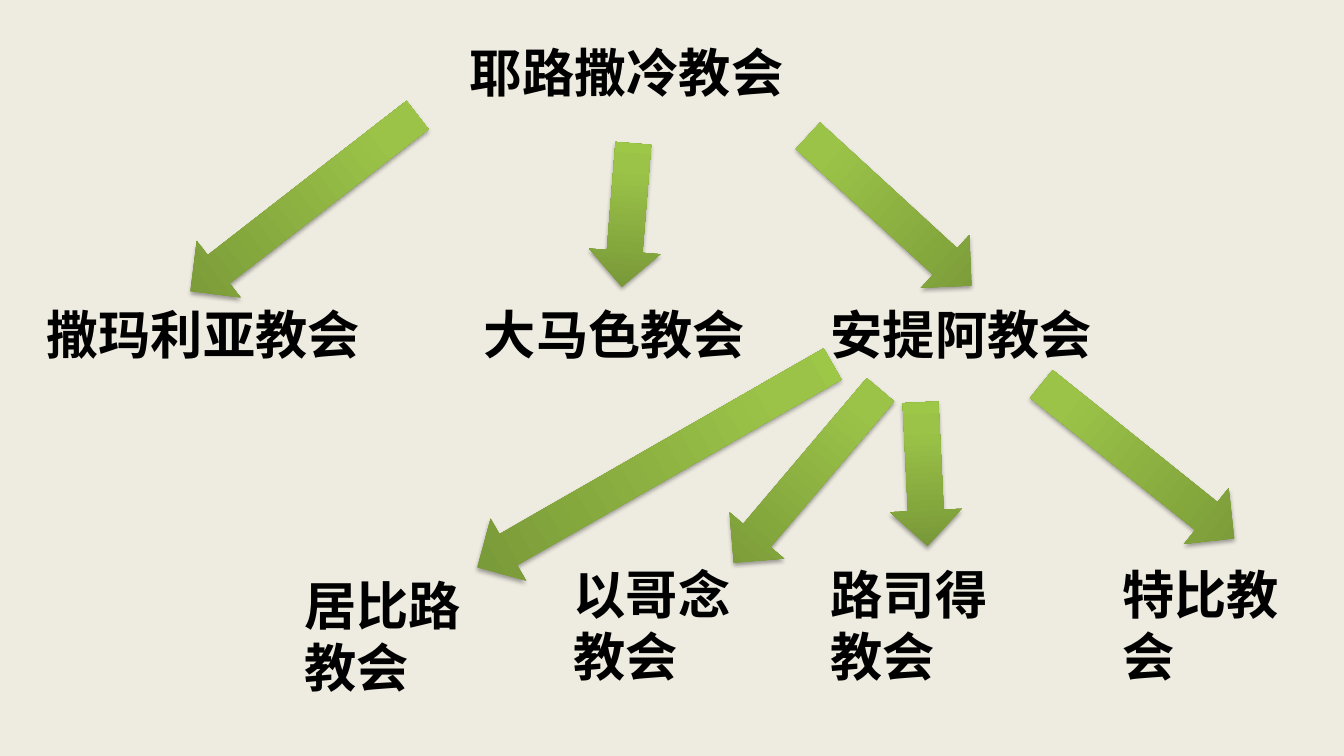
from pptx import Presentation
from pptx.dml.color import RGBColor
from pptx.enum.shapes import MSO_SHAPE
from pptx.enum.text import MSO_ANCHOR, PP_ALIGN
from pptx.oxml import parse_xml
from pptx.oxml.ns import nsdecls
from pptx.util import Inches, Pt

COLORS = {
    "background": "EEECE1",
    "text": "000000",
    "arrow_tip": "779737",
    "arrow_middle": "9BC348",
    "arrow_tail": "9DC746",
}
ARROW_WIDTH = 0.71


def write_church(frame, name, side_inset, font="Calibri"):
    frame.word_wrap = True
    frame.vertical_anchor = MSO_ANCHOR.MIDDLE
    frame.margin_left = frame.margin_right = Inches(side_inset)
    frame.margin_top = frame.margin_bottom = Inches(0.07)
    paragraph = frame.paragraphs[0]
    paragraph.text = name
    paragraph.alignment = PP_ALIGN.LEFT
    paragraph.line_spacing = 1.0
    paragraph.space_before = Pt(0)
    paragraph.font.name = font
    paragraph.font.size = Pt(37.3)
    paragraph.font.bold = True
    paragraph.font.color.rgb = RGBColor.from_string(COLORS["text"])


prs = Presentation()
prs.slide_width, prs.slide_height = Inches(13.33), Inches(7.5)
slide = prs.slides.add_slide(prs.slide_layouts[5])
slide.background.fill.solid()
slide.background.fill.fore_color.rgb = RGBColor.from_string(COLORS["background"])

# Mother church
jerusalem = slide.shapes.title
jerusalem.left, jerusalem.top = Inches(4.56), Inches(0)
jerusalem.width, jerusalem.height = Inches(3.67), Inches(1.42)
write_church(jerusalem.text_frame, "耶路撒冷教会", 0.1)

# Daughter churches: name, left, top, width, height
churches = [
    ("撒玛利亚教会", 0.33, 2.86, 3.44, 0.89),
    ("大马色教会", 4.67, 2.86, 2.89, 0.89),
    ("安提阿教会", 8.11, 2.86, 3.44, 0.89),
    ("居比路教会", 2.89, 5.75, 2, 1.11),
    ("以哥念教会", 5.56, 5.75, 2.33, 0.89),
    ("路司得教会", 8.11, 5.75, 2.33, 0.89),
    ("特比教会", 11, 5.64, 2.33, 1.11),
]
for name, *place in churches:
    church = slide.shapes.add_textbox(*[Inches(length) for length in place])
    write_church(church.text_frame, name, 0.13)

# Arrows: left, top, length, rotation
arrows = [
    (2.66, 0.59, 2.85, 52.2),
    (8.47, 0.99, 2.2, 312.5),
    (5.87, 1.42, 1.43, 4.6),
    (8.81, 3.99, 1.43, 357.2),
    (7.65, 3.6, 2.25, 40.3),
    (6.14, 2.59, 4.06, 60.2),
    (10.93, 3.35, 2.45, 308.7),
]
gradient_stops = [(0, "arrow_tip"), (80, "arrow_middle"), (100, "arrow_tail")]
stops_xml = "".join(
    f'<a:gs pos="{percent * 1000}"><a:srgbClr val="{COLORS[key]}"/></a:gs>'
    for percent, key in gradient_stops
)
shadow_xml = (
    f'<a:effectLst {nsdecls("a")}>'
    f'<a:outerShdw blurRad="{Pt(3.1)}" dist="{Pt(1.8)}" dir="5400000" rotWithShape="0">'
    f'<a:srgbClr val="{COLORS["text"]}"><a:alpha val="35000"/></a:srgbClr>'
    "</a:outerShdw></a:effectLst>"
)
for left, top, length, rotation in arrows:
    arrow = slide.shapes.add_shape(
        MSO_SHAPE.DOWN_ARROW,
        Inches(left), Inches(top), Inches(ARROW_WIDTH), Inches(length),
    )
    arrow.rotation = rotation
    arrow.line.fill.background()
    # Three-stop gradient, dark at the tip
    arrow.fill.gradient()
    arrow.fill.gradient_angle = 90
    stop_list = arrow.fill.gradient_stops[0]._gs.getparent()
    stop_list.getparent().replace(
        stop_list, parse_xml(f'<a:gsLst {nsdecls("a")}>{stops_xml}</a:gsLst>')
    )
    # Soft shadow below
    arrow._element.spPr.append(parse_xml(shadow_xml))

prs.save("out.pptx")
